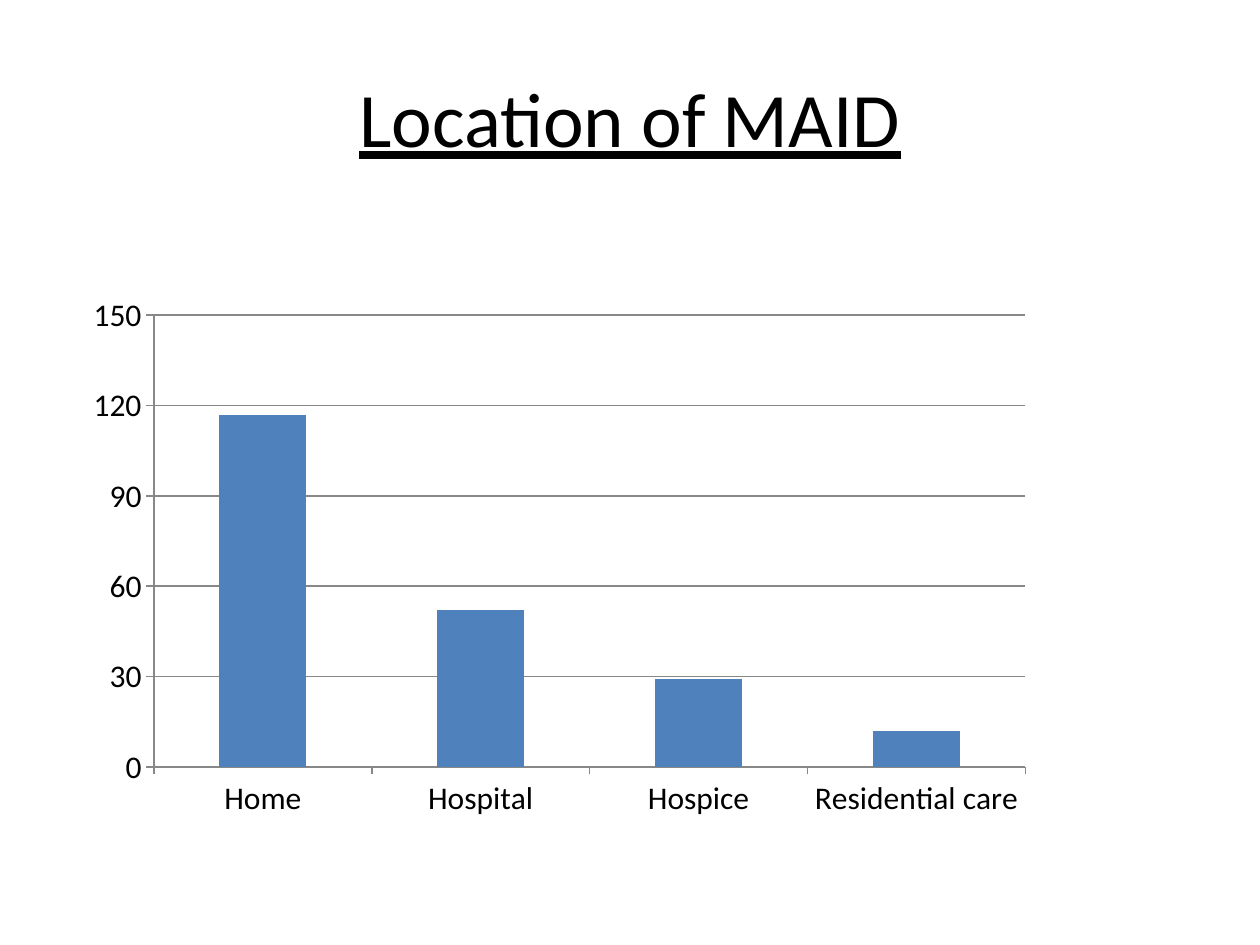
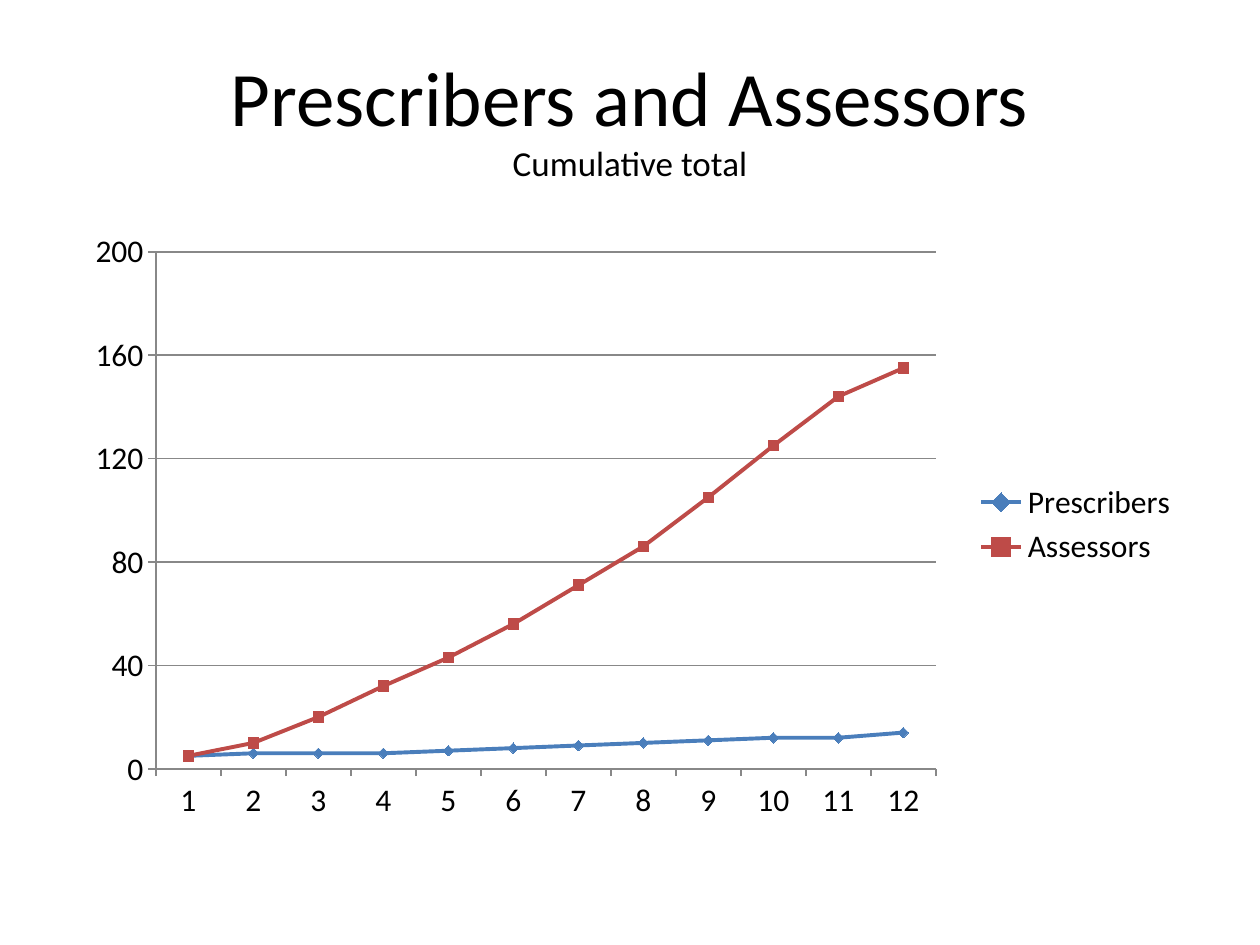
from lxml import etree
from pptx import Presentation
from pptx.chart.data import CategoryChartData
from pptx.dml.color import RGBColor
from pptx.enum import chart as ch, text
from pptx.oxml import ns
from pptx.util import Cm, Pt

BLACK = RGBColor(0x00, 0x00, 0x00)
GREY = RGBColor(0x88, 0x88, 0x88)
BLUE = RGBColor(0x4F, 0x81, 0xBD)
BLUE_LINE = RGBColor(0x4A, 0x7E, 0xBB)
RED = RGBColor(0xC0, 0x50, 0x4D)
RED_LINE = RGBColor(0xBE, 0x4B, 0x48)
FONT = "Calibri"
TITLE_BOX = (1.27, 0.76, 22.86, 3.18)

SLIDES = [
    dict(
        title=[("Location of MAID", dict(size=44, underline=True))],
        kind=ch.XL_CHART_TYPE.COLUMN_CLUSTERED,
        box=(1.42, 5.61, 19.35, 11.13),
        plot=(0.087, 0.067, 0.908, 0.818),
        step=30, top=150,
        categories=["Home", "Hospital", "Hospice", "Residential care"],
        series=[("Series 1", [117, 52, 29, 12], dict(fill=BLUE))],
    ),
    dict(
        title=[("Prescribers and Assessors", dict(size=44)),
               ("Cumulative total", dict(size=20))],
        kind=ch.XL_CHART_TYPE.LINE_MARKERS,
        box=(1.45, 4.34, 22.56, 12.47),
        plot=(0.075, 0.059, 0.697, 0.836),
        step=40, top=200,
        categories=[str(month) for month in range(1, 13)],
        series=[
            ("Prescribers", [5, 6, 6, 6, 7, 8, 9, 10, 11, 12, 12, 14],
             dict(fill=BLUE, line=BLUE_LINE, marker=ch.XL_MARKER_STYLE.DIAMOND)),
            ("Assessors", [5, 10, 20, 32, 43, 56, 71, 86, 105, 125, 144, 155],
             dict(fill=RED, line=RED_LINE, marker=ch.XL_MARKER_STYLE.SQUARE)),
        ],
    ),
]


def style_font(font, size, underline=None):
    font.name, font.size, font.underline = FONT, Pt(size), underline
    font.color.rgb = BLACK


def add_text(paragraph, wording, **style):
    run = paragraph.add_run()
    run.text = wording
    style_font(run.font, **style)


def write_title(title, lines):
    title.left, title.top, title.width, title.height = map(Cm, TITLE_BOX)
    frame = title.text_frame
    frame.vertical_anchor = text.MSO_ANCHOR.MIDDLE
    frame.margin_left = frame.margin_right = Cm(0.13)
    frame.margin_top = frame.margin_bottom = Cm(0.13)
    heading = frame.paragraphs[0]
    heading.alignment = text.PP_ALIGN.CENTER
    for number, (wording, style) in enumerate(lines):
        if number:
            heading.add_line_break()
        add_text(heading, wording, **style)


def set_line(line, color, width):
    line.color.rgb, line.width = color, Pt(width)


def style_axis(axis):
    axis.major_tick_mark = ch.XL_TICK_MARK.OUTSIDE
    axis.minor_tick_mark = ch.XL_TICK_MARK.NONE
    style_font(axis.tick_labels.font, 18)
    set_line(axis.format.line, GREY, 1)


def place_plot(chart, place):
    area = chart.element.find(".//" + ns.qn("c:plotArea"))
    for old in area.findall(ns.qn("c:layout")):
        area.remove(old)
    layout = etree.Element(ns.qn("c:layout"))
    manual = etree.SubElement(layout, ns.qn("c:manualLayout"))
    settings = [("layoutTarget", "inner"), ("xMode", "edge"), ("yMode", "edge"),
                *zip("xywh", place)]
    for tag, value in settings:
        etree.SubElement(manual, ns.qn("c:" + tag)).set("val", str(value))
    area.insert(0, layout)


def style_series(series, fill, line=None, marker=None):
    if marker is None:
        series.format.fill.solid()
        series.format.fill.fore_color.rgb = fill
        return
    series.smooth = False
    set_line(series.format.line, line, 2.25)
    series.marker.style, series.marker.size = marker, 6
    series.marker.format.fill.solid()
    series.marker.format.fill.fore_color.rgb = fill
    set_line(series.marker.format.line, line, 0.75)


def draw_chart(slide, kind, box, plot, step, top, categories, series):
    data = CategoryChartData()
    data.categories = categories
    for name, values, _ in series:
        data.add_series(name, values)
    chart = slide.shapes.add_chart(kind, *map(Cm, box), data).chart
    style_font(chart.font, 10)
    chart.has_title = False
    place_plot(chart, plot)

    counts = chart.value_axis
    for axis in (chart.category_axis, counts):
        style_axis(axis)
    chart.category_axis.tick_label_position = ch.XL_TICK_LABEL_POSITION.LOW
    counts.minimum_scale, counts.maximum_scale, counts.major_unit = 0, top, step
    counts.tick_labels.number_format = "0"
    counts.tick_labels.number_format_is_linked = False
    set_line(counts.major_gridlines.format.line, GREY, 1)

    plotted = chart.plots[0]
    plotted.vary_by_categories = False
    if kind == ch.XL_CHART_TYPE.COLUMN_CLUSTERED:
        plotted.gap_width = 150
    for drawn, (_, _, style) in zip(plotted.series, series):
        style_series(drawn, **style)

    chart.has_legend = len(series) > 1
    if chart.has_legend:
        chart.legend.position = ch.XL_LEGEND_POSITION.RIGHT
        chart.legend.include_in_layout = True
        style_font(chart.legend.font, 18)


def main():
    deck = Presentation()
    deck.slide_width, deck.slide_height = Cm(25.4), Cm(19.05)
    for content in SLIDES:
        slide = deck.slides.add_slide(deck.slide_layouts[5])
        write_title(slide.shapes.title, content["title"])
        draw_chart(slide, **{key: value for key, value in content.items() if key != "title"})
    deck.save("out.pptx")


if __name__ == "__main__":
    main()
